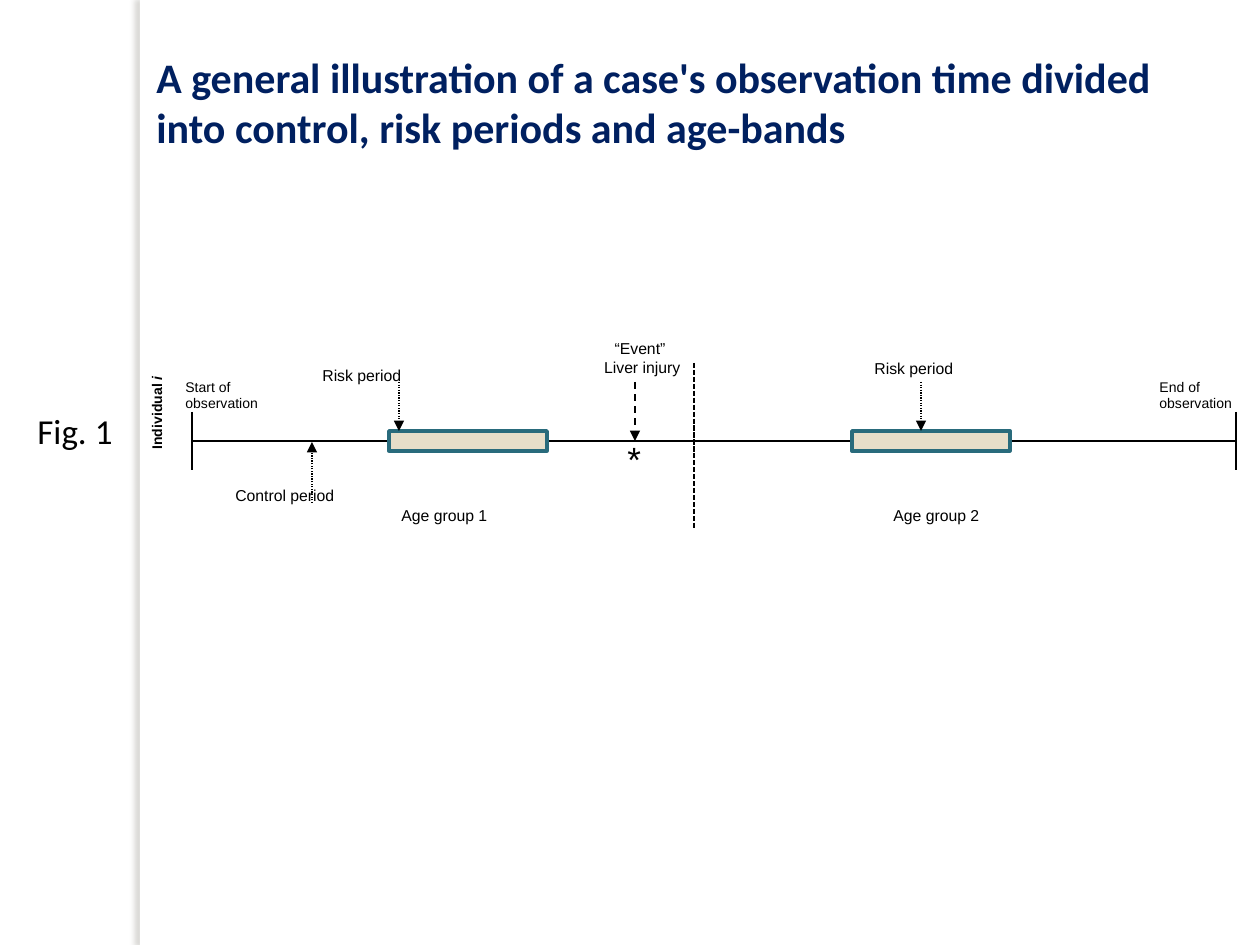
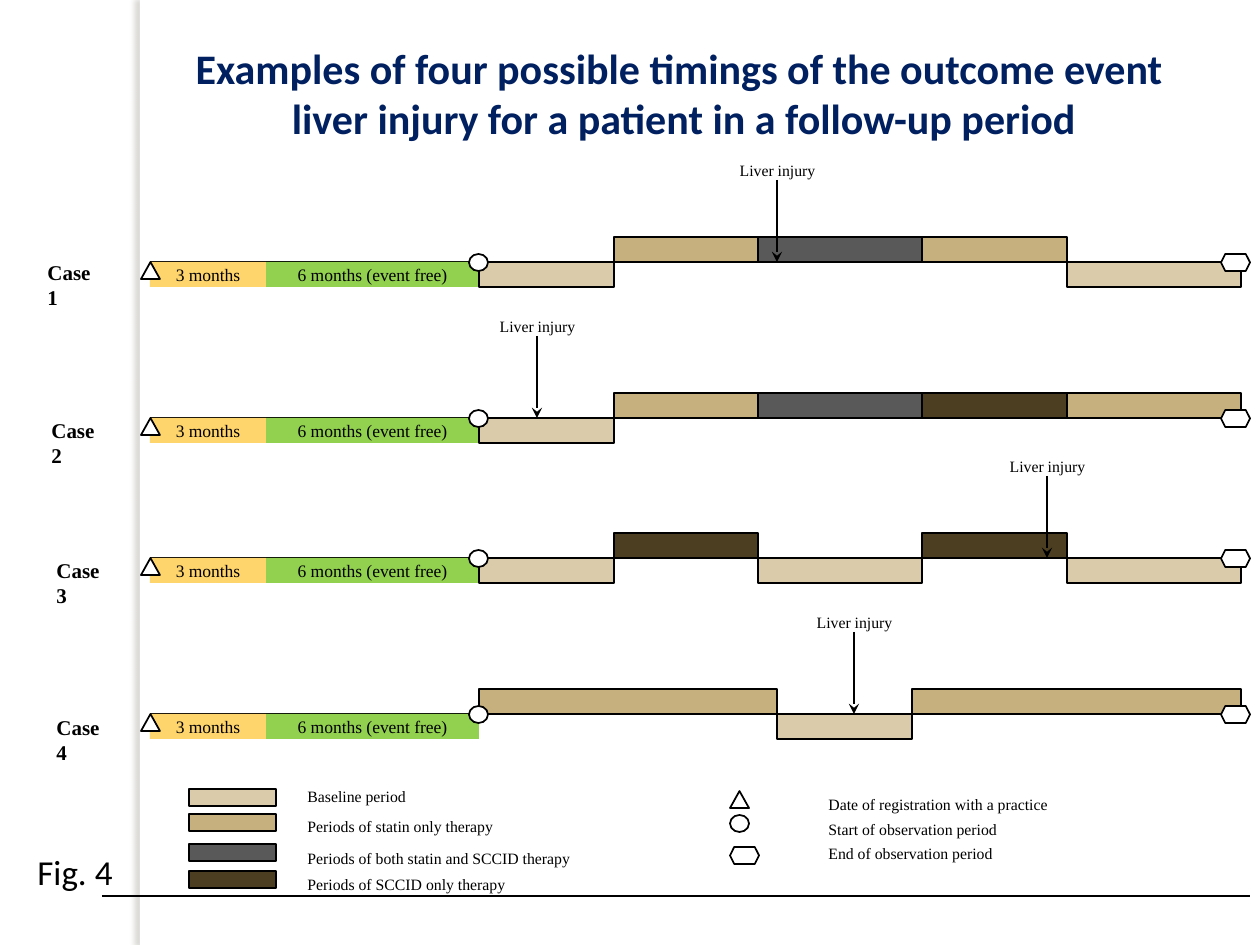
from lxml.etree import SubElement
from pptx import Presentation
from pptx.dml.color import RGBColor
from pptx.enum.dml import MSO_LINE as Dash
from pptx.enum.shapes import MSO_CONNECTOR as Connector, MSO_SHAPE as Shape
from pptx.enum.text import MSO_ANCHOR as Anchor, PP_ALIGN as Align
from pptx.oxml.ns import qn
from pptx.util import Emu, Pt

EMU_PER_PX = 914400 / 126
PAGE_WIDTH, PAGE_HEIGHT = 1260, 945
BLACK, WHITE, NAVY = "000000", "FFFFFF", "002060"
SAND, TEAL, SHADOW = "E7DEC9", "296B7C", "736F63"
YELLOW, GREEN = "FED46C", "92D050"
BASELINE, STATIN, BOTH, SCCID = "DACCAB", "C6B07E", "595959", "4B3E21"

STYLES = {
    "title": {"name": "Calibri", "size": Pt(24), "bold": True},
    "figure": {"name": "Calibri", "size": Pt(20)},
    "label": {"name": "Arial", "size": Pt(9)},
    "small": {"name": "Arial", "size": Pt(8)},
    "small bold": {"name": "Arial", "size": Pt(8), "bold": True},
    "small bold italic": {"name": "Arial", "size": Pt(8), "bold": True, "italic": True},
    "star": {"name": "Arial", "size": Pt(20)},
    "bar": {"name": "Times New Roman", "size": Pt(10)},
    "note": {"name": "Times New Roman", "size": Pt(9)},
    "case": {"name": "Times New Roman", "size": Pt(12), "bold": True},
}

BAR_HEIGHT = 25
REGISTERED, RUN_IN, OBSERVED, FIRST, SECOND, THIRD, LAST = 150, 266, 479, 614, 758, 922, 1067
OBSERVATION_END = 1241
CASES = [
    ("Case 1", 35, 253, 262, 777, [
        (OBSERVED, FIRST, BASELINE), (FIRST, SECOND, STATIN), (SECOND, THIRD, BOTH),
        (THIRD, LAST, STATIN), (LAST, OBSERVATION_END, BASELINE)]),
    ("Case 2", 39, 411, 418, 537, [
        (OBSERVED, FIRST, BASELINE), (FIRST, SECOND, STATIN), (SECOND, THIRD, BOTH),
        (THIRD, LAST, SCCID), (LAST, OBSERVATION_END, STATIN)]),
    ("Case 3", 44, 551, 558, 1047, [
        (OBSERVED, FIRST, BASELINE), (FIRST, SECOND, SCCID), (SECOND, THIRD, BASELINE),
        (THIRD, LAST, SCCID), (LAST, OBSERVATION_END, BASELINE)]),
    ("Case 4", 44, 708, 714, 854, [
        (OBSERVED, 777, STATIN), (777, 912, BASELINE), (912, OBSERVATION_END, STATIN)]),
]
PERIOD_KEY = [
    (BASELINE, 789, 781, "Baseline period"),
    (STATIN, 814, 811, "Periods of statin only therapy"),
    (BOTH, 844, 843, "Periods of both statin and SCCID therapy"),
    (SCCID, 871, 869, "Periods of SCCID only therapy"),
]
MARKER_KEY = [
    (Shape.ISOSCELES_TRIANGLE, 791, 789, "Date of registration with a practice"),
    (Shape.OVAL, 815, 814, "Start of observation period"),
    (Shape.HEXAGON, 847, 838, "End of observation period"),
]


def px(*lengths):
    """Turn px lengths into EMU."""
    return [Emu(round(length * EMU_PER_PX)) for length in lengths]


def color(value):
    """Turn a hex string into a colour."""
    return RGBColor.from_string(value)


def add_span(para, text, style, ink=BLACK):
    """Add a run of text in a named style."""
    span = para.add_run()
    span.text = text
    for key, value in STYLES[style].items():
        setattr(span.font, key, value)
    span.font.color.rgb = color(ink)


def add_text(page, area, lines, style, ink=BLACK, align=Align.LEFT):
    """Add a wrapping text box with one paragraph for each line."""
    box = page.shapes.add_textbox(*px(*area))
    frame = box.text_frame
    frame.word_wrap = True
    for number, line in enumerate(lines):
        para = frame.add_paragraph() if number else frame.paragraphs[0]
        para.alignment = align
        add_span(para, line, style, ink)
    return box


def add_block(page, kind, area, fill, outline=BLACK, weight=1):
    """Add a filled preset shape, without an outline if weight is 0."""
    block = page.shapes.add_shape(kind, *px(*area))
    block.shadow.inherit = False
    block.fill.solid()
    block.fill.fore_color.rgb = color(fill)
    if weight:
        block.line.color.rgb = color(outline)
        block.line.width = Pt(weight)
    else:
        block.line.fill.background()
    return block


def add_line(page, start, end, weight=1, dash=None, head=None):
    """Add a black line, with an optional dash and arrowhead at its end."""
    line = page.shapes.add_connector(Connector.STRAIGHT, *px(*start, *end))
    line.line.color.rgb = color(BLACK)
    line.line.width = Pt(weight)
    if dash:
        line.line.dash_style = dash
    properties = line._element.spPr
    if head:
        SubElement(properties.find(qn("a:ln")), qn("a:tailEnd"), type=head)
    SubElement(properties, qn("a:effectLst"))


def add_named_bar(page, left, right, top, fill, text):
    """Add a bar without outline and with centred text."""
    bar = add_block(page, Shape.RECTANGLE, (left, top, right - left, BAR_HEIGHT), fill, weight=0)
    bar.text_frame.vertical_anchor = Anchor.MIDDLE
    para = bar.text_frame.paragraphs[0]
    para.alignment = Align.CENTER
    add_span(para, text, "bar")


def add_marker(page, kind, left, top):
    """Add a small white marker."""
    width = 29 if kind == Shape.HEXAGON else 19
    add_block(page, kind, (left, top, width, 17), WHITE)


def add_page(deck, title, title_area, align, figure, figure_top):
    """Add a page with the side band, title and figure number."""
    page = deck.slides.add_slide(deck.slide_layouts[6])
    band = add_block(page, Shape.RECTANGLE, (140, 0, 10, PAGE_HEIGHT), WHITE, weight=0)
    effects = band._element.spPr.find(qn("a:effectLst"))
    shadow = SubElement(effects, qn("a:outerShdw"), blurRad="38100", dist="38100",
                        dir="10800000", rotWithShape="0")
    tint = SubElement(shadow, qn("a:srgbClr"), val=SHADOW)
    SubElement(tint, qn("a:alpha"), val="25000")
    add_text(page, title_area, title, "title", NAVY, align)
    add_text(page, (25, figure_top, 105, 55), [figure], "figure")
    return page


def add_case(page, name, name_left, name_top, base, injury, periods):
    """Add one patient's timeline with its periods and its event."""
    add_line(page, (REGISTERED, base), (1221, base))
    add_named_bar(page, RUN_IN, OBSERVED, base, GREEN, "6 months (event free)")
    add_named_bar(page, REGISTERED, RUN_IN, base, YELLOW, "3 months")
    for left, right, fill in periods:
        top = base if fill == BASELINE else base - BAR_HEIGHT
        add_block(page, Shape.RECTANGLE, (left, top, right - left, BAR_HEIGHT), fill)
    add_marker(page, Shape.ISOSCELES_TRIANGLE, 141, base)
    add_marker(page, Shape.OVAL, 469, base - 8)
    add_marker(page, Shape.HEXAGON, 1221, base - 8)
    add_line(page, (injury, base - 82), (injury, base), head="stealth")
    add_text(page, (injury - 67, base - 107, 135, 26), ["Liver injury"], "note", align=Align.CENTER)
    add_text(page, (name_left, name_top, 83, 32), [name], "case")


def add_key(page):
    """Add the key of periods and markers."""
    for fill, top, text_top, text in PERIOD_KEY:
        add_block(page, Shape.RECTANGLE, (189, top, 87, 17), fill)
        add_text(page, (295, text_top, 396, 26), [text], "note")
    for kind, top, text_top, text in MARKER_KEY:
        add_marker(page, kind, 730, top)
        add_text(page, (816, text_top, 258, 26), [text], "note")
    add_line(page, (102, 896), (1250, 896))


def add_observation_page(deck):
    """Add the page on one case's observation time."""
    page = add_page(
        deck, ["A general illustration of a case's observation time divided into control, "
               "risk periods and age-bands"], (144, 45, 1071, 115), Align.LEFT, "Fig. 1", 403)
    axis = 441
    add_line(page, (192, axis), (1236, axis), 1.5)
    for tick in (192, 1236):
        add_line(page, (tick, 412), (tick, 470), 1.5)
    for left in (389, 852):
        add_block(page, Shape.RECTANGLE, (left, 431, 158, 20), SAND, TEAL, 2)
    add_line(page, (694, 363), (694, 529), dash=Dash.SQUARE_DOT)
    add_line(page, (635, 382), (635, axis), dash=Dash.DASH, head="triangle")
    for x, start, end in ((921, 382, 431), (399, 382, 431), (312, 503, 442)):
        add_line(page, (x, start), (x, end), 0.75, Dash.ROUND_DOT, "triangle")
    add_text(page, (586, 333, 108, 50), ["“Event”", " Liver injury"], "label", align=Align.CENTER)
    for left, top, width, text, style in (
            (389, 500, 118, "Age group 1", "label"),
            (881, 500, 118, "Age group 2", "label"),
            (862, 353, 118, "Risk period", "label"),
            (310, 360, 118, "Risk period", "label"),
            (223, 480, 129, "Control period", "label"),
            (173, 372, 118, "Start of observation", "small"),
            (1147, 372, 118, "End of observation", "small"),
            (615, 431, 39, "*", "star")):
        add_text(page, (left, top, width, 32), [text], style)
    person = add_text(page, (107, 397, 100, 30), ["Individual "], "small bold")
    add_span(person.text_frame.paragraphs[0], "i", "small bold italic")
    person.text_frame.word_wrap = False
    person.rotation = 270


def add_timings_page(deck):
    """Add the page with four cases."""
    page = add_page(
        deck, ["Examples of four possible timings of the outcome event ",
               "liver injury for a patient in a follow-up period"],
        (117, 36, 1134, 115), Align.CENTER, "Fig. 4", 844)
    for case in CASES:
        add_case(page, *case)
    add_key(page)


def main():
    """Build and save the deck."""
    deck = Presentation()
    deck.slide_width, deck.slide_height = px(PAGE_WIDTH, PAGE_HEIGHT)
    add_observation_page(deck)
    add_timings_page(deck)
    deck.save("out.pptx")


if __name__ == "__main__":
    main()
